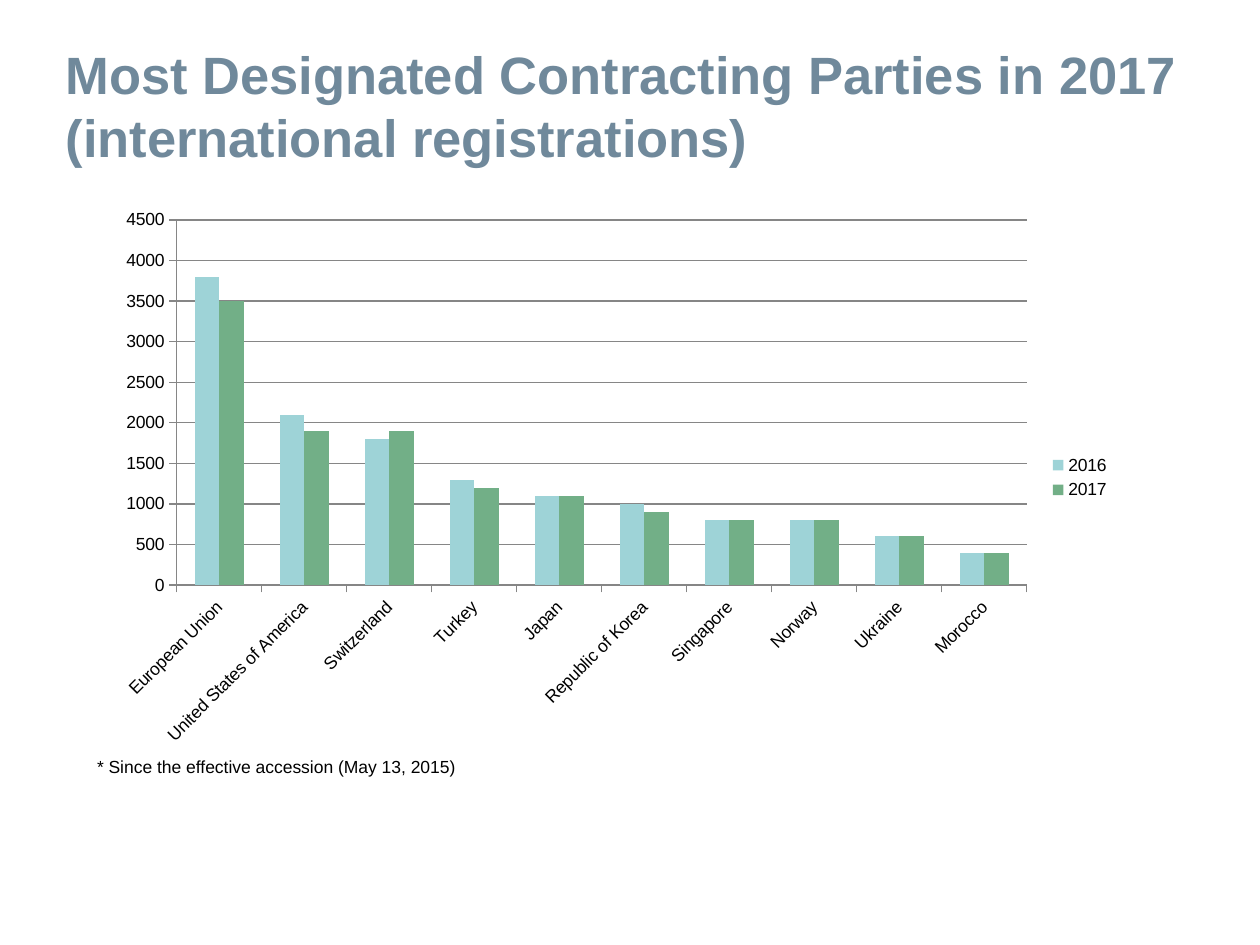
from lxml import etree
from pptx import Presentation
from pptx.chart.data import CategoryChartData
from pptx.dml.color import RGBColor
from pptx.enum.chart import XL_CHART_TYPE, XL_LEGEND_POSITION, XL_TICK_MARK
from pptx.enum.text import MSO_ANCHOR, MSO_AUTO_SIZE, PP_ALIGN
from pptx.oxml.ns import qn
from pptx.util import Inches, Pt

CLUSTERED = XL_CHART_TYPE.COLUMN_CLUSTERED
RIGHT = XL_LEGEND_POSITION.RIGHT
OUTSIDE = XL_TICK_MARK.OUTSIDE
TOP = MSO_ANCHOR.TOP
NO_FIT = MSO_AUTO_SIZE.NONE
LEFT = PP_ALIGN.LEFT

WIDTH, HEIGHT = Inches(10), Inches(7.5)
FONT = "Arial"
HEADING, INK, RULE = "70899B", "000000", "868686"

TITLE_LINES = ["Most Designated Contracting Parties in 2017",
               "(international registrations)"]
FOOTNOTE = "* Since the effective accession (May 13, 2015)"
PARTIES = ["European Union", "United States of America", "Switzerland",
           "Turkey", "Japan", "Republic of Korea", "Singapore", "Norway",
           "Ukraine", "Morocco"]
DESIGNATIONS = {
    "2016": ("9ED3D7", [3800, 2100, 1800, 1300, 1100, 1000, 800, 800, 600, 400]),
    "2017": ("72AF87", [3500, 1900, 1900, 1200, 1100, 900, 800, 800, 600, 400]),
}


def rgb(value):
    """Turn a hex string into a colour."""
    return RGBColor.from_string(value)


def apply(target, formats):
    """Set each attribute named in formats on target."""
    for name, value in formats.items():
        setattr(target, name, value)


def style_font(font, size, colour, bold=False):
    """Give a font its face, size, weight and colour."""
    apply(font, {"name": FONT, "size": Pt(size), "bold": bold})
    font.color.rgb = rgb(colour)


def write_placeholder(placeholder, box, lines, size, colour, bold, wrap):
    """Move a placeholder to box and fill it with plain left-aligned lines."""
    apply(placeholder, dict(zip(("left", "top", "width", "height"), box)))
    frame = placeholder.text_frame
    frame.text = "\n".join(lines)
    apply(frame, {"word_wrap": wrap, "vertical_anchor": TOP,
                  "auto_size": NO_FIT})
    for paragraph in frame.paragraphs:
        properties = paragraph._p.get_or_add_pPr()
        apply(paragraph, {"alignment": LEFT, "space_before": Pt(0)})
        properties.set("marL", "0")
        properties.set("indent", "0")
        etree.SubElement(properties, qn("a:buNone"))
        for run in paragraph.runs:
            style_font(run.font, size, colour, bold)


def style_axes(chart):
    """Format both axes, the gridlines and the slanted party names."""
    parties, counts = chart.category_axis, chart.value_axis
    apply(counts, {"minimum_scale": 0, "maximum_scale": 4500,
                   "major_unit": 500, "has_major_gridlines": True})
    for axis in (parties, counts):
        axis.major_tick_mark = OUTSIDE
        style_font(axis.tick_labels.font, 10, INK)
    for ruled in (parties, counts, counts.major_gridlines):
        ruled.format.line.color.rgb = rgb(RULE)
        ruled.format.line.width = Pt(0.75)
    label_body = parties._element.find(qn("c:txPr")).find(qn("a:bodyPr"))
    label_body.set("rot", "-2700000")
    label_body.set("vert", "horz")


def add_designations_chart(slide, box):
    """Draw the designations of each party by year in box."""
    designations = CategoryChartData(number_format="General")
    designations.categories = PARTIES
    for year, (_, counts) in DESIGNATIONS.items():
        designations.add_series(year, counts)
    chart = slide.shapes.add_chart(CLUSTERED, *box, designations).chart
    style_font(chart.font, 10, INK)
    apply(chart, {"has_title": False, "has_legend": True})
    apply(chart.legend, {"position": RIGHT, "include_in_layout": False})
    style_font(chart.legend.font, 10, INK)
    plot = chart.plots[0]
    apply(plot, {"gap_width": 150, "overlap": 0, "vary_by_categories": False})
    for series, (colour, _) in zip(plot.series, DESIGNATIONS.values()):
        series.format.fill.solid()
        series.format.fill.fore_color.rgb = rgb(colour)
    style_axes(chart)


def main():
    """Build the slide and save it."""
    deck = Presentation()
    apply(deck, {"slide_width": WIDTH, "slide_height": HEIGHT})
    slide = deck.slides.add_slide(deck.slide_layouts[1])
    title, footnote = slide.placeholders
    write_placeholder(
        title, (Inches(0.42), Inches(0.28), Inches(9.18), Inches(1.11)),
        TITLE_LINES, 30, HEADING, True, False)
    write_placeholder(
        footnote, (Inches(0.67), Inches(5.95), Inches(6), Inches(0.88)),
        [FOOTNOTE], 10, INK, False, True)
    add_designations_chart(
        slide, (Inches(0.83), Inches(1.58), Inches(8.08), Inches(4.42)))
    deck.save("out.pptx")


if __name__ == "__main__":
    main()
